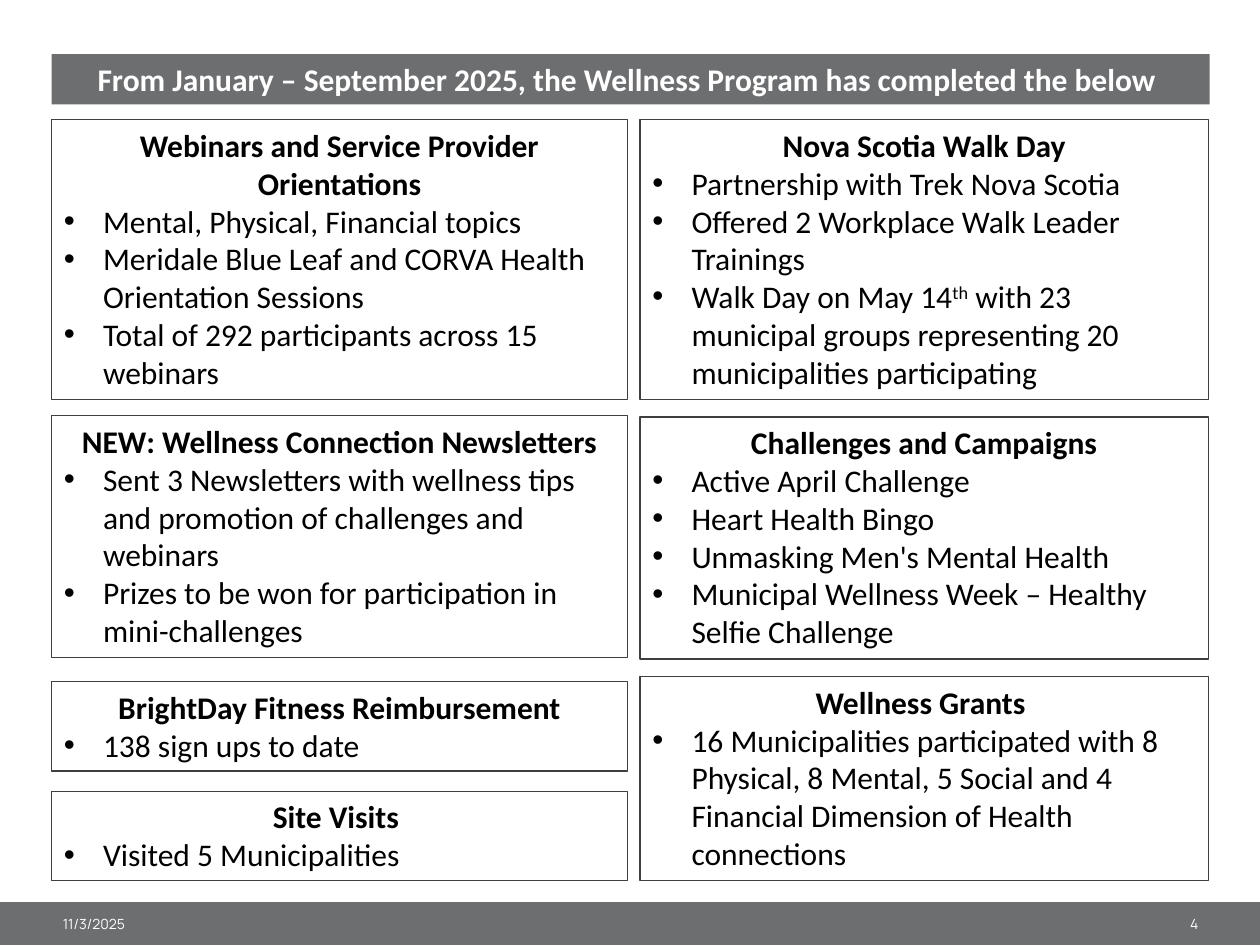
"""Build the Wellness Program progress slide."""
from dataclasses import dataclass

from lxml.etree import SubElement
from pptx import Presentation
from pptx.dml.color import RGBColor
from pptx.enum.shapes import MSO_SHAPE
from pptx.enum.text import MSO_ANCHOR, MSO_AUTO_SIZE, PP_ALIGN
from pptx.oxml.ns import qn
from pptx.util import Inches, Pt

COLORS = {"band": "6D6E70", "border": "3F3F3F", "ink": "000000", "paper": "FFFFFF"}
WIDTH, HEIGHT = Inches(10), Inches(7.5)
COLUMN, ROW = WIDTH / 100, HEIGHT / 75
INDENT = Inches(0.31)
BODY_FONT, FOOTER_FONT = "Calibri", "Manrope"


@dataclass(frozen=True)
class Area:
    column: float
    row: float
    columns: float
    rows: float

    def place(self) -> tuple[int, int, int, int]:
        return (int(self.column * COLUMN), int(self.row * ROW),
                int(self.columns * COLUMN), int(self.rows * ROW))


@dataclass(frozen=True)
class Span:
    text: str
    raised: bool = False


@dataclass(frozen=True)
class Card:
    row: float
    rows: float
    heading: str
    points: tuple[tuple[Span, ...], ...]


@dataclass(frozen=True)
class Stack:
    column: float
    columns: float
    cards: tuple[Card, ...]


def plain(*texts: str) -> tuple[tuple[Span, ...], ...]:
    return tuple((Span(text),) for text in texts)


STACKS = (
    Stack(4.1, 45.7, (
        Card(9.5, 22.2, "Webinars and Service Provider Orientations", plain(
            "Mental, Physical, Financial topics",
            "Meridale Blue Leaf and CORVA Health Orientation Sessions",
            "Total of 292 participants across 15 webinars")),
        Card(33, 19.2, "NEW: Wellness Connection Newsletters", plain(
            "Sent 3 Newsletters with wellness tips and promotion of challenges and webinars",
            "Prizes to be won for participation in mini-challenges")),
        Card(54.1, 7.1, "BrightDay Fitness Reimbursement", plain("138 sign ups to date")),
        Card(62.8, 7.1, "Site Visits ", plain("Visited 5 Municipalities")),
    )),
    Stack(50.8, 45.1, (
        Card(9.5, 22.2, "Nova Scotia Walk Day", (
            *plain("Partnership with Trek Nova Scotia",
                   "Offered 2 Workplace Walk Leader Trainings"),
            (Span("Walk Day on May 14"), Span("th", raised=True),
             Span(" with 23 municipal groups representing 20 municipalities participating")))),
        Card(33.1, 19.2, "Challenges and Campaigns", plain(
            "Active April Challenge",
            "Heart Health Bingo",
            "Unmasking Men's Mental Health",
            "Municipal Wellness Week – Healthy Selfie Challenge")),
        Card(53.7, 16.2, "Wellness Grants ", plain(
            "16 Municipalities participated with 8 Physical, 8 Mental, 5 Social and 4 "
            "Financial Dimension of Health connections")),
    )),
)


def color(name: str) -> RGBColor:
    return RGBColor.from_string(COLORS[name])


def add_span(paragraph, span: Span, ink: str, size: float = 18,
             bold: bool = False, face: str = BODY_FONT) -> None:
    run = paragraph.add_run()
    run.text = span.text
    run.font.size, run.font.bold, run.font.name = Pt(size), bold, face
    run.font.color.rgb = color(ink)
    if span.raised:
        run._r.get_or_add_rPr().set("baseline", "30000")


def add_bullet(paragraph) -> None:
    properties = paragraph._p.get_or_add_pPr()
    properties.set("marL", str(INDENT))
    properties.set("indent", str(-INDENT))
    SubElement(properties, qn("a:buFont")).set("typeface", "Arial")
    SubElement(properties, qn("a:buChar")).set("char", "•")


def add_box(slide, area: Area, fill: str | None = None, border: str | None = None):
    box = slide.shapes.add_shape(MSO_SHAPE.RECTANGLE, *area.place())
    box.shadow.inherit = False
    if fill:
        box.fill.solid()
        box.fill.fore_color.rgb = color(fill)
    else:
        box.fill.background()
    if border:
        box.line.color.rgb = color(border)
        box.line.width = Pt(0.75)
    else:
        box.line.fill.background()
    return box


def add_heading(box, text: str, ink: str) -> None:
    frame = box.text_frame
    frame.word_wrap = True
    frame.vertical_anchor = MSO_ANCHOR.TOP
    frame.auto_size = MSO_AUTO_SIZE.SHAPE_TO_FIT_TEXT
    frame.paragraphs[0].alignment = PP_ALIGN.CENTER
    add_span(frame.paragraphs[0], Span(text), ink, bold=True)


def add_card(slide, stack: Stack, card: Card) -> None:
    box = add_box(slide, Area(stack.column, card.row, stack.columns, card.rows), border="border")
    add_heading(box, card.heading, "ink")
    for point in card.points:
        paragraph = box.text_frame.add_paragraph()
        paragraph.alignment = PP_ALIGN.LEFT
        add_bullet(paragraph)
        for span in point:
            add_span(paragraph, span, "ink")


def add_footer_text(slide, area: Area, text: str, alignment: PP_ALIGN) -> None:
    frame = slide.shapes.add_textbox(*area.place()).text_frame
    frame.word_wrap = True
    frame.vertical_anchor = MSO_ANCHOR.MIDDLE
    frame.paragraphs[0].alignment = alignment
    add_span(frame.paragraphs[0], Span(text), "paper", size=8, face=FOOTER_FONT)


def main() -> None:
    deck = Presentation()
    deck.slide_width, deck.slide_height = WIDTH, HEIGHT
    slide = deck.slides.add_slide(deck.slide_layouts[6])

    add_box(slide, Area(0, 71.6, 100, 3.4), fill="band")
    add_footer_text(slide, Area(4, 71.8, 20.3, 3.1), "11/3/2025", PP_ALIGN.LEFT)
    add_footer_text(slide, Area(85.3, 71.8, 10.8, 3.1), "4", PP_ALIGN.RIGHT)

    banner = add_box(slide, Area(4.1, 4.3, 91.9, 4), fill="band")
    add_heading(banner, "From January – September 2025, the Wellness Program "
                        "has completed the below ", "paper")

    for stack in STACKS:
        for card in stack.cards:
            add_card(slide, stack, card)

    deck.save("out.pptx")


if __name__ == "__main__":
    main()
